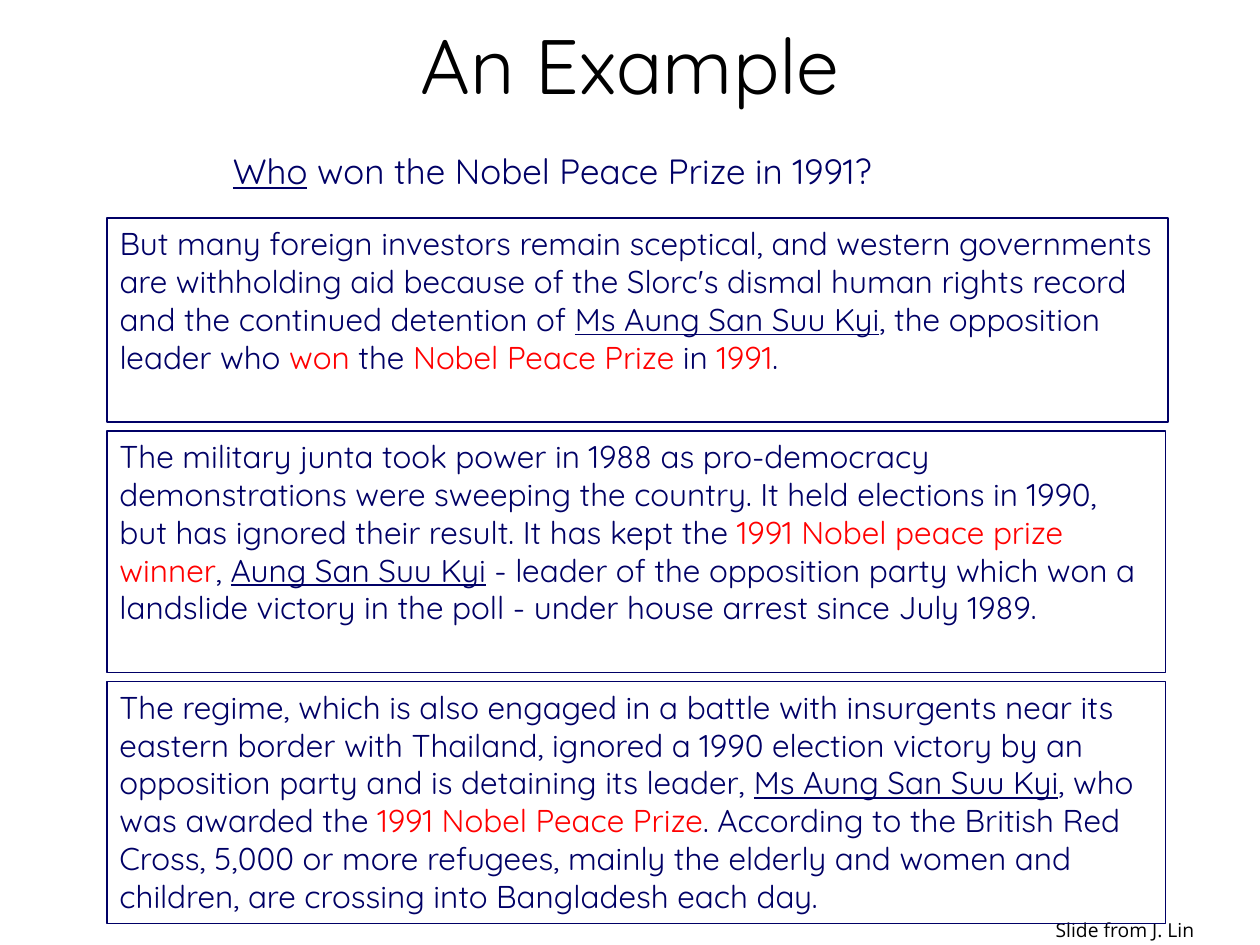
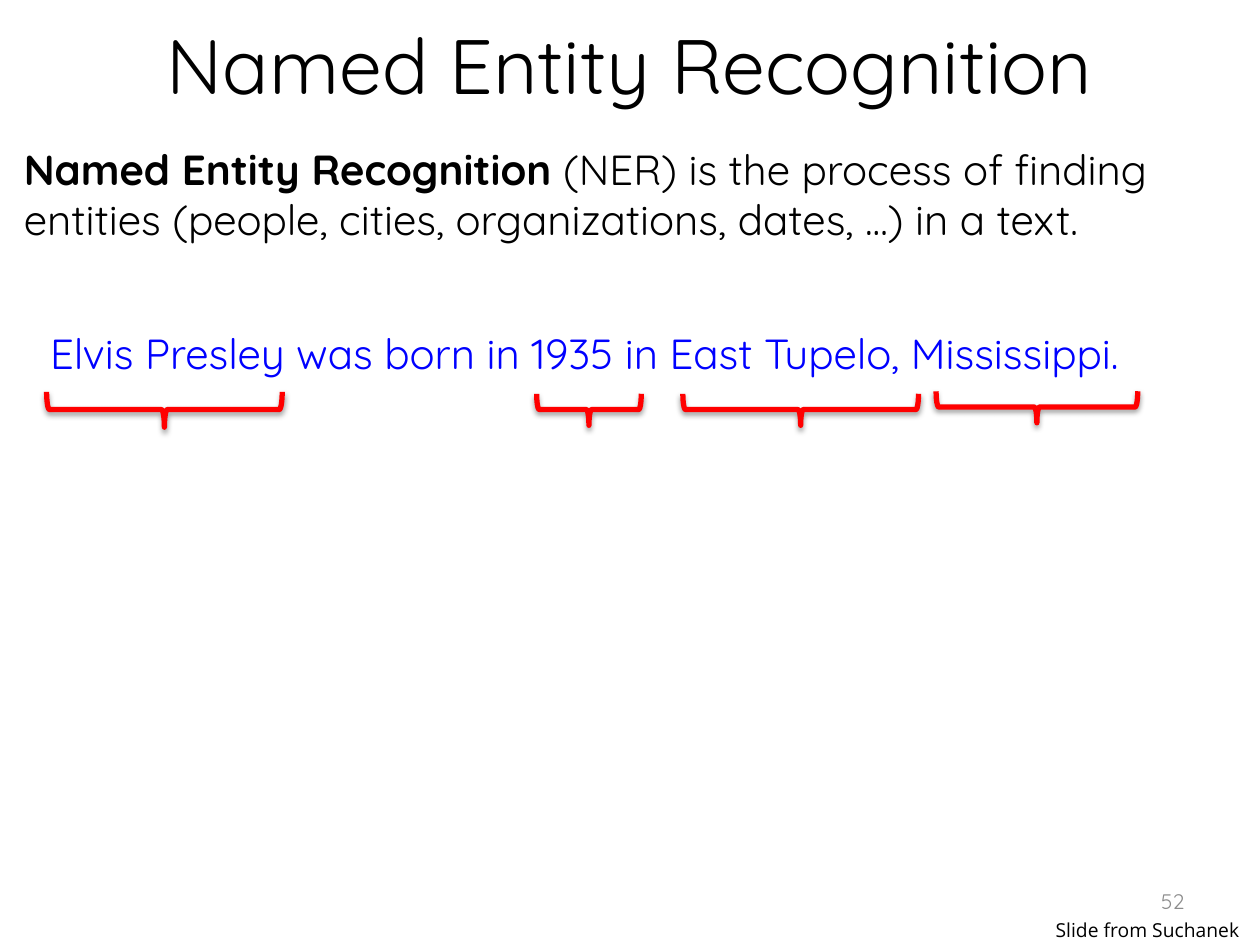
from lxml import etree
from pptx import Presentation
from pptx.dml.color import RGBColor
from pptx.enum.shapes import MSO_SHAPE as Shape
from pptx.enum.text import MSO_ANCHOR as Anchor, PP_ALIGN as Align
from pptx.oxml.ns import qn
from pptx.util import Inches, Pt

WIDE, HIGH = 10, 7.5
HEAD, NOTE = "Quicksand", "Open Sans"
BLACK, NAVY, BLUE, RED, GREY = "000000", "000066", "0001FF", "FF0000", "8C8C8C"

# A run is plain text or a (text, mark) pair.
LINE, HIT, BOLD = "line", "hit", "bold"

QUERY = [("Who", LINE), " won the Nobel Peace Prize in 1991?"]
QUOTES = [  # width, height, runs
    (8.42, 1.62, [
        "But many foreign investors remain sceptical, and western governments are "
        "withholding aid because of the Slorc's dismal human rights record and the "
        "continued detention of ",
        ("Ms Aung San Suu Kyi", LINE), ", the opposition leader who ", ("won", HIT),
        " the ", ("Nobel Peace Prize", HIT), " in ", ("1991", HIT), "."]),
    (8.4, 1.92, [
        "The military junta took power in 1988 as pro-democracy demonstrations were "
        "sweeping the country. It held elections in 1990, but has ignored their "
        "result. It has kept the ",
        ("1991 Nobel peace prize winner", HIT), ", ", ("Aung San Suu Kyi", LINE),
        " - leader of the opposition party which won a landslide victory in the poll "
        "- under house arrest since July 1989."]),
    (8.4, 1.92, [
        "The regime, which is also engaged in a battle with insurgents near its "
        "eastern border with Thailand, ignored a 1990 election victory by an "
        "opposition party and is detaining its leader, ",
        ("Ms Aung San Suu Kyi", LINE), ", who was awarded the ",
        ("1991 Nobel Peace Prize", HIT),
        ". According to the British Red Cross, 5,000 or more refugees, mainly the "
        "elderly and women and children, are crossing into Bangladesh each day."]),
]
QUOTE_LEFT, QUOTE_TOP, QUOTE_GAP = 0.85, 1.73, 0.07

MEANING = [("Named Entity Recognition ", BOLD),
           "(NER) is the process of finding entities (people, cities, "
           "organizations, dates, ...) in a text."]
SAMPLE = ["Elvis Presley was born in 1935 in East Tupelo, Mississippi."]
BRACES = [  # left, span, depth, middle height
    (0.37, 1.87, 0.28, 3.25),
    (4.26, 0.83, 0.25, 3.25),
    (5.42, 1.87, 0.25, 3.25),
    (7.43, 1.6, 0.25, 3.23),
]


def rgb(code):
    return RGBColor.from_string(code)


def write(shape, runs, size, color, font=HEAD, align=Align.LEFT,
          anchor=Anchor.TOP, wrap=True):
    frame = shape.text_frame
    frame.word_wrap, frame.vertical_anchor = wrap, anchor
    para = frame.paragraphs[0]
    para.alignment = align
    para.font.name, para.font.size = font, Pt(size)
    for item in runs:
        text, mark = (item, None) if isinstance(item, str) else item
        run = para.add_run()
        run.text = text
        run.font.color.rgb = rgb(RED if mark == HIT else color)
        if mark == LINE:
            run.font.underline = True
        if mark == BOLD:
            run.font.bold = True


def label(slide, box, runs, size, color, **style):
    shape = slide.shapes.add_textbox(*map(Inches, box))
    write(shape, runs, size, color, **style)


def outline(slide, kind, box, color, width):
    """Add an unfilled shape with a plain line and no shadow."""
    shape = slide.shapes.add_shape(kind, *map(Inches, box))
    shape.shadow.inherit = False
    shape.fill.background()
    shape.line.color.rgb, shape.line.width = rgb(color), Pt(width)
    return shape


def shade(shape):
    """Drop a soft black shadow straight down."""
    effects = shape._element.spPr.find(qn("a:effectLst"))
    drop = etree.SubElement(effects, qn("a:outerShdw"), blurRad="40000",
                            dist="20000", dir="5400000", rotWithShape="0")
    tint = etree.SubElement(drop, qn("a:srgbClr"), val=BLACK)
    etree.SubElement(tint, qn("a:alpha"), val="38000")


def brace(slide, left, span, depth, mid):
    """Turn a left brace so that it opens upward below the words."""
    box = (left + (span - depth) / 2, mid - span / 2, depth, span)
    shape = outline(slide, Shape.LEFT_BRACE, box, RED, 3)
    shape.rotation = 270
    shade(shape)


def start(deck, title, credit, width):
    slide = deck.slides.add_slide(deck.slide_layouts[6])
    label(slide, (0.5, 0, WIDE - 1, 1.01), [title], 44, BLACK,
          align=Align.CENTER, anchor=Anchor.MIDDLE)
    label(slide, (8.28, 7.24, width, 0.29), [credit], 11, BLACK,
          font=NOTE, wrap=False)
    return slide


def example(deck):
    slide = start(deck, "An Example", "Slide from J. Lin", 1.38)
    label(slide, (1.75, 1.14, 5.76, 0.44), QUERY, 20, NAVY, wrap=False)
    top = QUOTE_TOP
    for width, height, runs in QUOTES:
        box = outline(slide, Shape.RECTANGLE, (QUOTE_LEFT, top, width, height),
                      NAVY, 0.75)
        write(box, runs, 18, NAVY)
        top += height + QUOTE_GAP


def naming(deck):
    slide = start(deck, "Named Entity Recognition", "Slide from Suchanek", 1.72)
    label(slide, (0.09, 1.09, 9.55, 0.91), MEANING, 24, BLACK)
    label(slide, (0.3, 2.55, 9.7, 0.5), SAMPLE, 24, BLUE)
    for spot in BRACES:
        brace(slide, *spot)
    label(slide, (7.17, 6.95, 2.33, 0.4), ["52"], 12, GREY,
          align=Align.RIGHT, anchor=Anchor.MIDDLE)


def main():
    deck = Presentation()
    deck.slide_width, deck.slide_height = Inches(WIDE), Inches(HIGH)
    example(deck)
    naming(deck)
    deck.save("out.pptx")


if __name__ == "__main__":
    main()
